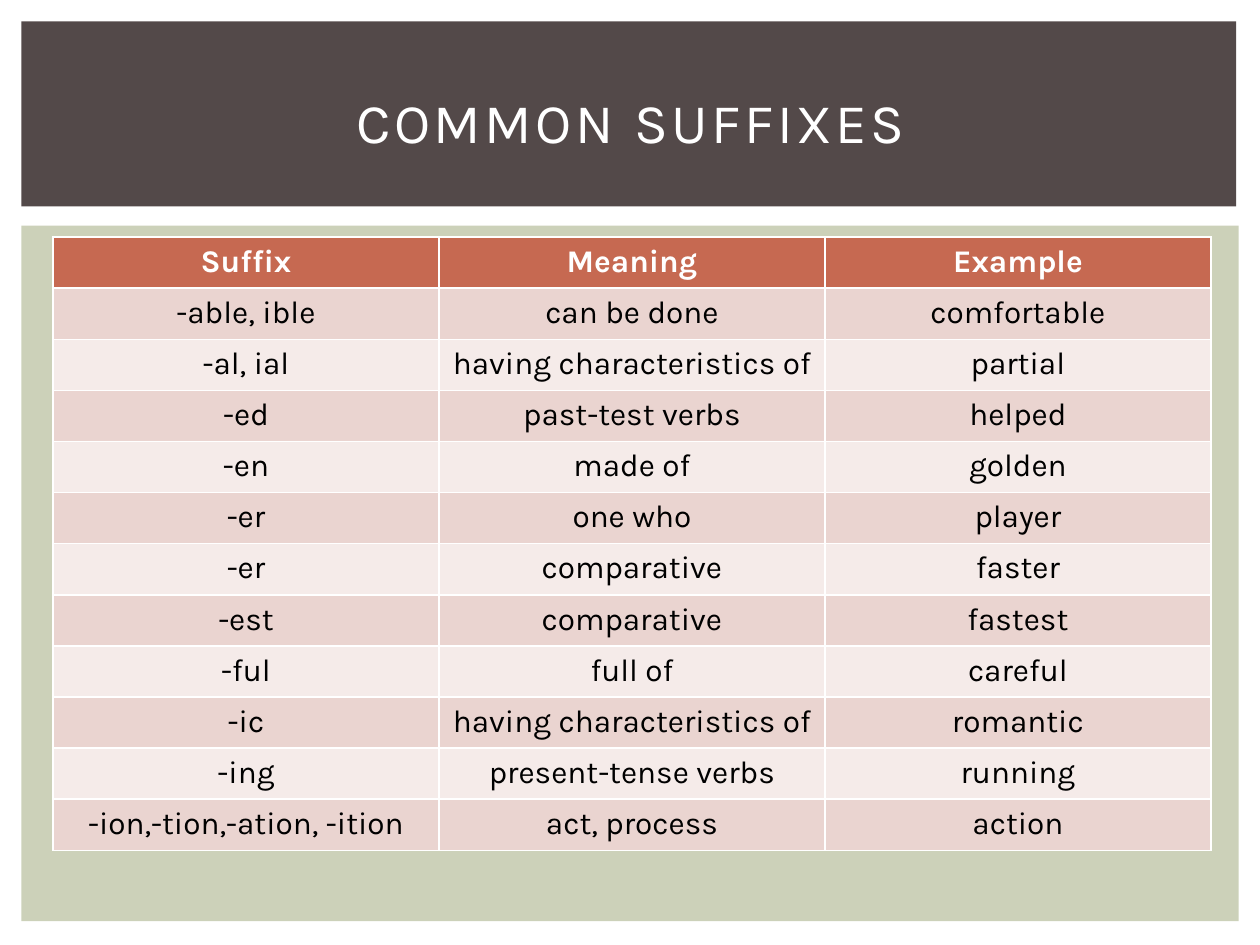
import pptx
import pptx.dml.color
import pptx.enum.shapes
import pptx.enum.text
import pptx.util

Cm = pptx.util.Cm
CENTER = pptx.enum.text.PP_ALIGN.CENTER
MIDDLE = pptx.enum.text.MSO_ANCHOR.MIDDLE


def rgb(hex_code):
    return pptx.dml.color.RGBColor.from_string(hex_code)


def format_text(paragraph, color, **font_format):
    paragraph.alignment = CENTER
    font = paragraph.runs[0].font
    font.color.rgb = rgb(color)
    for attribute, value in {"name": "Karla", **font_format}.items():
        setattr(font, attribute, value)


SUFFIXES = [
    ("Suffix", "Meaning", "Example"),
    ("-able, ible", "can be done", "comfortable"),
    ("-al, ial", "having characteristics of", "partial"),
    ("-ed", "past-test verbs", "helped"),
    ("-en", "made of", "golden"),
    ("-er", "one who", "player"),
    ("-er", "comparative", "faster"),
    ("-est", "comparative", "fastest"),
    ("-ful", "full of", "careful"),
    ("-ic", "having characteristics of", "romantic"),
    ("-ing", "present-tense verbs", "running"),
    ("-ion,-tion,-ation, -ition", "act, process", "action"),
]
COLUMN_WIDTH = Cm(7.78)
ROW_HEIGHT = Cm(1.03)

deck = pptx.Presentation()
deck.slide_width, deck.slide_height = Cm(25.4), Cm(19.05)
slide = deck.slides.add_slide(deck.slide_layouts[5])

# Background panels: body, then title band
for top, width, height, color in [
    (4.55, 24.54, 14.02, "CCD1B9"),
    (0.43, 24.49, 3.73, "534949"),
]:
    panel = slide.shapes.add_shape(
        pptx.enum.shapes.MSO_SHAPE.RECTANGLE, Cm(0.43), Cm(top), Cm(width), Cm(height)
    )
    panel.shadow.inherit = False
    panel.fill.solid()
    panel.fill.fore_color.rgb = rgb(color)
    panel.line.fill.background()

# Suffix table
suffix_table = slide.shapes.add_table(
    len(SUFFIXES), 3, Cm(1.07), Cm(4.78), COLUMN_WIDTH * 3, ROW_HEIGHT * len(SUFFIXES)
).table
for column in suffix_table.columns:
    column.width = COLUMN_WIDTH
for row_number, entries in enumerate(SUFFIXES):
    suffix_table.rows[row_number].height = ROW_HEIGHT
    is_header = row_number == 0
    band = "C66951" if is_header else ("F5EBE9", "EAD4D0")[row_number % 2]
    for column_number, entry in enumerate(entries):
        cell = suffix_table.cell(row_number, column_number)
        cell.text = entry
        cell.fill.solid()
        cell.fill.fore_color.rgb = rgb(band)
        format_text(
            cell.text_frame.paragraphs[0],
            "FFFFFF" if is_header else "000000",
            size=pptx.util.Pt(18),
            bold=is_header,
        )

# Title, brought in front of its band
title = slide.shapes.title
title_format = {"left": Cm(1.07), "top": Cm(0.99), "width": Cm(23.29), "height": Cm(2.92)}
for attribute, value in title_format.items():
    setattr(title, attribute, value)
title.text = "COMMON SUFFIXES"
title.text_frame.vertical_anchor = MIDDLE
heading = title.text_frame.paragraphs[0]
format_text(heading, "FFFFFF", size=pptx.util.Pt(32))
heading.runs[0].font._element.set("spc", "200")
slide.shapes._spTree.append(title._element)

deck.save("out.pptx")
